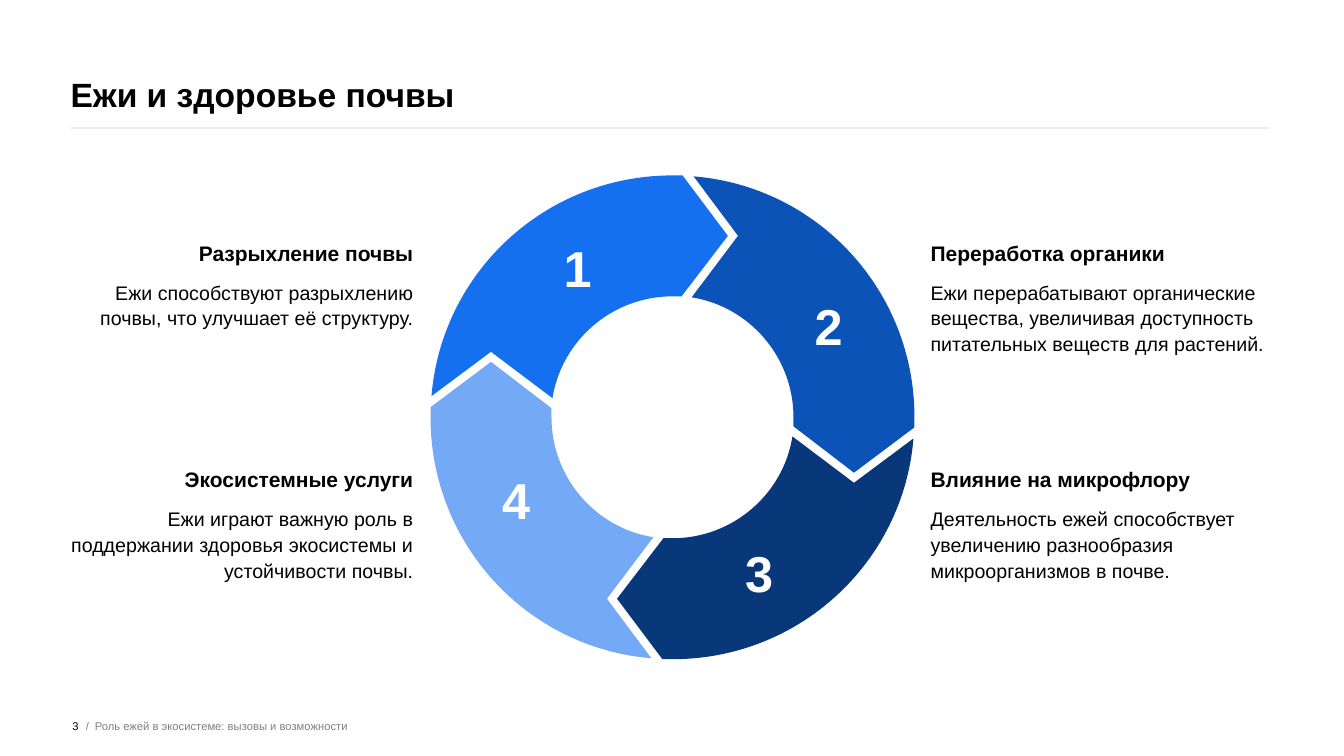
from lxml import etree
from pptx import Presentation
from pptx.dml.color import RGBColor
from pptx.enum.shapes import MSO_CONNECTOR
from pptx.enum.text import MSO_ANCHOR, MSO_AUTO_SIZE, PP_ALIGN
from pptx.oxml.ns import qn
from pptx.util import Inches, Pt

LEFT, CENTER, RIGHT = PP_ALIGN.LEFT, PP_ALIGN.CENTER, PP_ALIGN.RIGHT
TOP, MIDDLE, BOTTOM = MSO_ANCHOR.TOP, MSO_ANCHOR.MIDDLE, MSO_ANCHOR.BOTTOM
NO_AUTOFIT = MSO_AUTO_SIZE.NONE
STRAIGHT = MSO_CONNECTOR.STRAIGHT


def rgb(value):
    return RGBColor.from_string(value)


def write(text, left, top, width, height, size=14, color="000000", bold=False,
          align=LEFT, anchor=TOP, spacing=None, before=None, box=None):
    place = [Inches(value) for value in (left, top, width, height)]
    if box is None:
        box = page.shapes.add_textbox(*place)
    box.left, box.top, box.width, box.height = place
    frame = box.text_frame
    frame.margin_left = frame.margin_top = frame.margin_right = frame.margin_bottom = 0
    frame.auto_size = NO_AUTOFIT
    frame.word_wrap = True
    frame.vertical_anchor = anchor
    para = frame.paragraphs[0]
    para.alignment = align
    if spacing:
        para.line_spacing = spacing
    if before:
        para.space_before = Pt(before)
    span = para.add_run()
    span.text = text
    span.font.name = "Arial"
    span.font.size = Pt(size)
    span.font.bold = bold
    span.font.color.rgb = rgb(color)


deck = Presentation()
deck.slide_width = Inches(13.33)
deck.slide_height = Inches(7.5)
page = deck.slides.add_slide(deck.slide_layouts[5])

rule = page.shapes.add_connector(STRAIGHT, Inches(0.7), Inches(1.27), Inches(12.59), Inches(1.27))
rule.line.color.rgb = rgb("EAECF0")
rule.line.width = Pt(2)
etree.SubElement(rule._element.spPr, qn("a:effectLst"))

write("Ежи и здоровье почвы", 0.7, 0, 11.93, 1.13, size=24, bold=True,
      anchor=BOTTOM, before=10, box=page.shapes.title)

write(" /", 0.82, 6.91, 0.12, 0.59, size=8, color="808080", anchor=MIDDLE)
write("Роль ежей в экосистеме: вызовы и возможности", 0.94, 6.9, 8.61, 0.6,
      size=8, color="808080", anchor=MIDDLE, before=10)
write("3", 0.47, 6.9, 0.31, 0.6, size=8, align=RIGHT, anchor=MIDDLE, before=10)

topics = [
    (0.7, 2.41, RIGHT, "Разрыхление почвы",
     "Ежи способствуют разрыхлению почвы, что улучшает её структуру."),
    (0.7, 4.66, RIGHT, "Экосистемные услуги",
     "Ежи играют важную роль в поддержании здоровья экосистемы и устойчивости почвы."),
    (9.23, 2.41, LEFT, "Переработка органики",
     "Ежи перерабатывают органические вещества, увеличивая доступность питательных веществ для растений."),
    (9.23, 4.66, LEFT, "Влияние на микрофлору",
     "Деятельность ежей способствует увеличению разнообразия микроорганизмов в почве."),
]
for left, top, align, heading, body in topics:
    write(heading, left, top, 3.4, 0.23, size=15, bold=True, align=align, spacing=0.9)
    write(body, left, top + 0.35, 3.4, 1, align=align, spacing=1.1)

CENTER_X, CENTER_Y = 6.67, 4.14
CURVE_STARTS = (0, 3, 8, 11)
outline = [
    (0.1, -2.4),
    (0.06, -2.4), (0.03, -2.4), (0, -2.4),
    (-1.26, -2.4), (-2.29, -1.44), (-2.39, -0.21),
    (-1.8, -0.65), (-1.19, -0.19),
    (-1.1, -0.76), (-0.6, -1.2), (0, -1.2),
    (0.03, -1.2), (0.06, -1.2), (0.09, -1.2),
    (0.55, -1.8),
]

segments = [
    ("1570EF", 5.41, 2.35),
    ("0C53B7", 7.9, 2.93),
    ("08387A", 7.21, 5.38),
    ("73A9F5", 4.8, 4.65),
]
for color, left, top in segments:
    points = [(Inches(CENTER_X + x), Inches(CENTER_Y + y)) for x, y in outline]
    builder = page.shapes.build_freeform(*points[0])
    builder.add_line_segments(points[1:], close=True)
    segment = builder.convert_to_shape()
    lines = list(segment._element.iter(qn("a:lnTo")))
    for start in CURVE_STARTS:
        curve = etree.Element(qn("a:cubicBezTo"))
        lines[start].addprevious(curve)
        for line in lines[start:start + 3]:
            curve.append(line[0])
            line.getparent().remove(line)
    segment.fill.solid()
    segment.fill.fore_color.rgb = rgb(color)
    segment.line.fill.background()
    segment.shadow.inherit = False
    outline = [(-y, x) for x, y in outline]

for number, (color, left, top) in enumerate(segments, start=1):
    write(str(number), left, top, 0.64, 0.6, size=36, color="FFFFFF", bold=True, align=CENTER)

deck.save("out.pptx")
